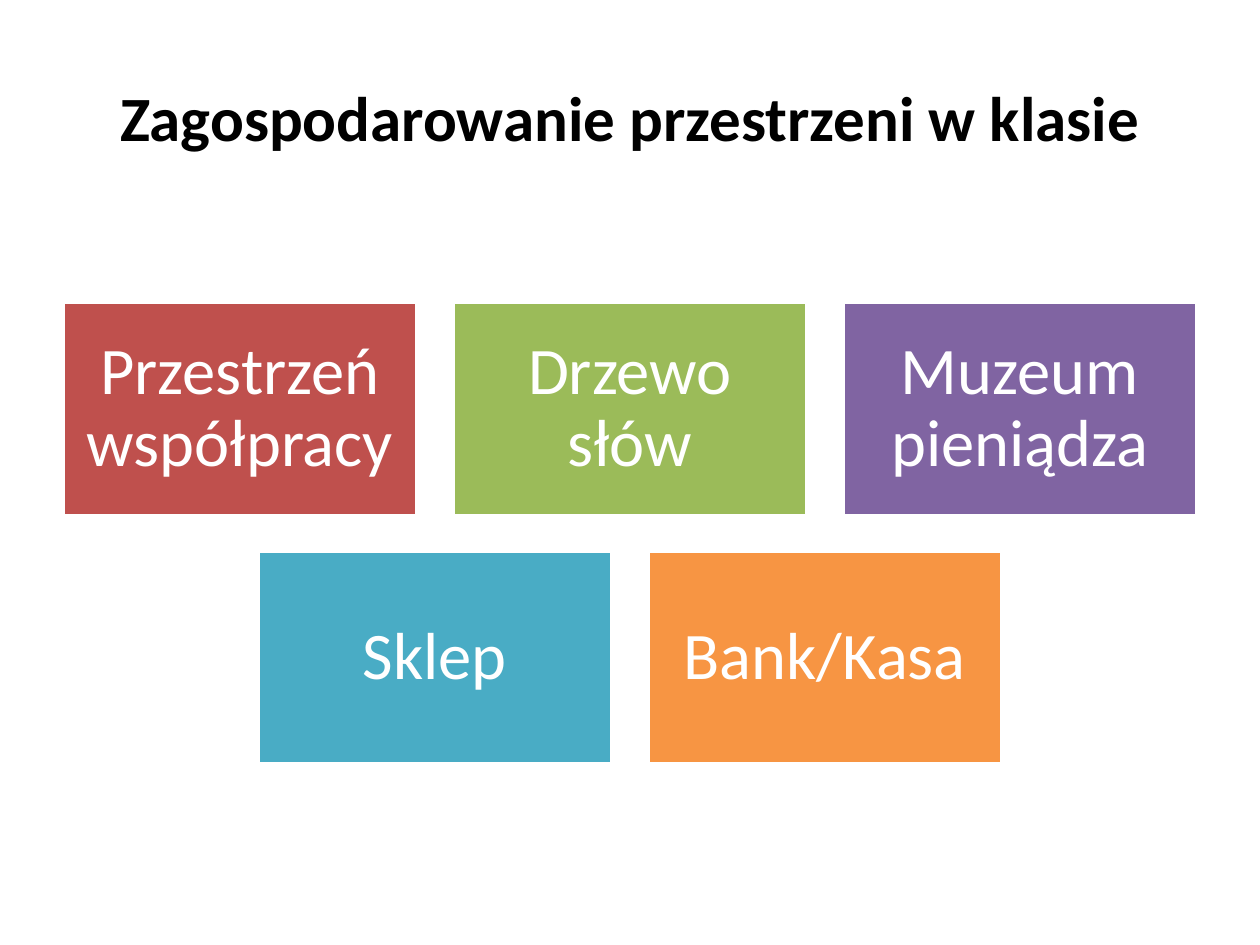
import pptx
import pptx.dml.color
import pptx.enum.shapes
import pptx.enum.text
import pptx.util

Cm = pptx.util.Cm
Pt = pptx.util.Pt
ALIGN = pptx.enum.text.PP_ALIGN
ANCHOR = pptx.enum.text.MSO_ANCHOR

COLOURS = {
    "black": "000000",
    "white": "FFFFFF",
    "red": "BF504D",
    "green": "9BBB59",
    "purple": "8064A2",
    "teal": "49ACC5",
    "orange": "F79543",
}
TITLE_FONT = {"name": "Calibri", "size": Pt(36), "bold": True}
AREA_FONT = {"name": "Calibri", "size": Pt(38), "bold": False}
AREA_MARGINS = {
    f"margin_{side}": Cm(0.41) for side in ("left", "top", "right", "bottom")
}
AREA_ROWS = [
    [
        ("Przestrzeń współpracy", "red"),
        ("Drzewo słów", "green"),
        ("Muzeum pieniądza", "purple"),
    ],
    [("Sklep", "teal"), ("Bank/Kasa", "orange")],
]


def rgb(colour):
    return pptx.dml.color.RGBColor.from_string(COLOURS[colour])


def apply_format(target, values):
    for attribute, value in values.items():
        setattr(target, attribute, value)


def write_text(frame, text, font, colour):
    apply_format(frame, {"word_wrap": True, "vertical_anchor": ANCHOR.MIDDLE})
    paragraph = frame.paragraphs[0]
    paragraph.alignment = ALIGN.CENTER
    run = paragraph.add_run()
    run.text = text
    apply_format(run.font, font)
    run.font.color.rgb = rgb(colour)
    return paragraph


def place_heading(slide, left, top, width, height):
    heading = slide.shapes.title
    apply_format(heading, {"left": Cm(left), "top": Cm(top),
                           "width": Cm(width), "height": Cm(height)})
    write_text(heading.text_frame, "Zagospodarowanie przestrzeni w klasie",
               TITLE_FONT, "black")


def place_area(group, text, colour, left, top, width, height):
    area = group.shapes.add_shape(
        pptx.enum.shapes.MSO_SHAPE.RECTANGLE,
        Cm(left), Cm(top), Cm(width), Cm(height))
    area.shadow.inherit = False
    area.fill.solid()
    area.fill.fore_color.rgb = rgb(colour)
    area.line.color.rgb = rgb("white")
    area.line.width = Pt(2)
    apply_format(area.text_frame, AREA_MARGINS)
    paragraph = write_text(area.text_frame, text, AREA_FONT, "white")
    paragraph.line_spacing = 0.9


def place_classroom_areas(slide, left, top, width, height, gap=0.72):
    group = slide.shapes.add_group_shape()
    columns = max(len(row) for row in AREA_ROWS)
    area_width = (width - gap * (columns - 1)) / columns
    area_height = (height - gap * (len(AREA_ROWS) - 1)) / len(AREA_ROWS)
    for row_index, row in enumerate(AREA_ROWS):
        row_width = len(row) * (area_width + gap) - gap
        row_left = left + (width - row_width) / 2
        row_top = top + row_index * (area_height + gap)
        for column, (text, colour) in enumerate(row):
            place_area(group, text, colour,
                       row_left + column * (area_width + gap), row_top,
                       area_width, area_height)


def main():
    presentation = pptx.Presentation()
    presentation.slide_width = Cm(25.4)
    presentation.slide_height = Cm(19.05)
    slide = presentation.slides.add_slide(presentation.slide_layouts[5])
    place_heading(slide, 1.27, 0.76, 22.86, 3.18)
    place_classroom_areas(slide, 1.27, 6.1, 22.86, 9.3)
    presentation.save("out.pptx")


if __name__ == "__main__":
    main()
